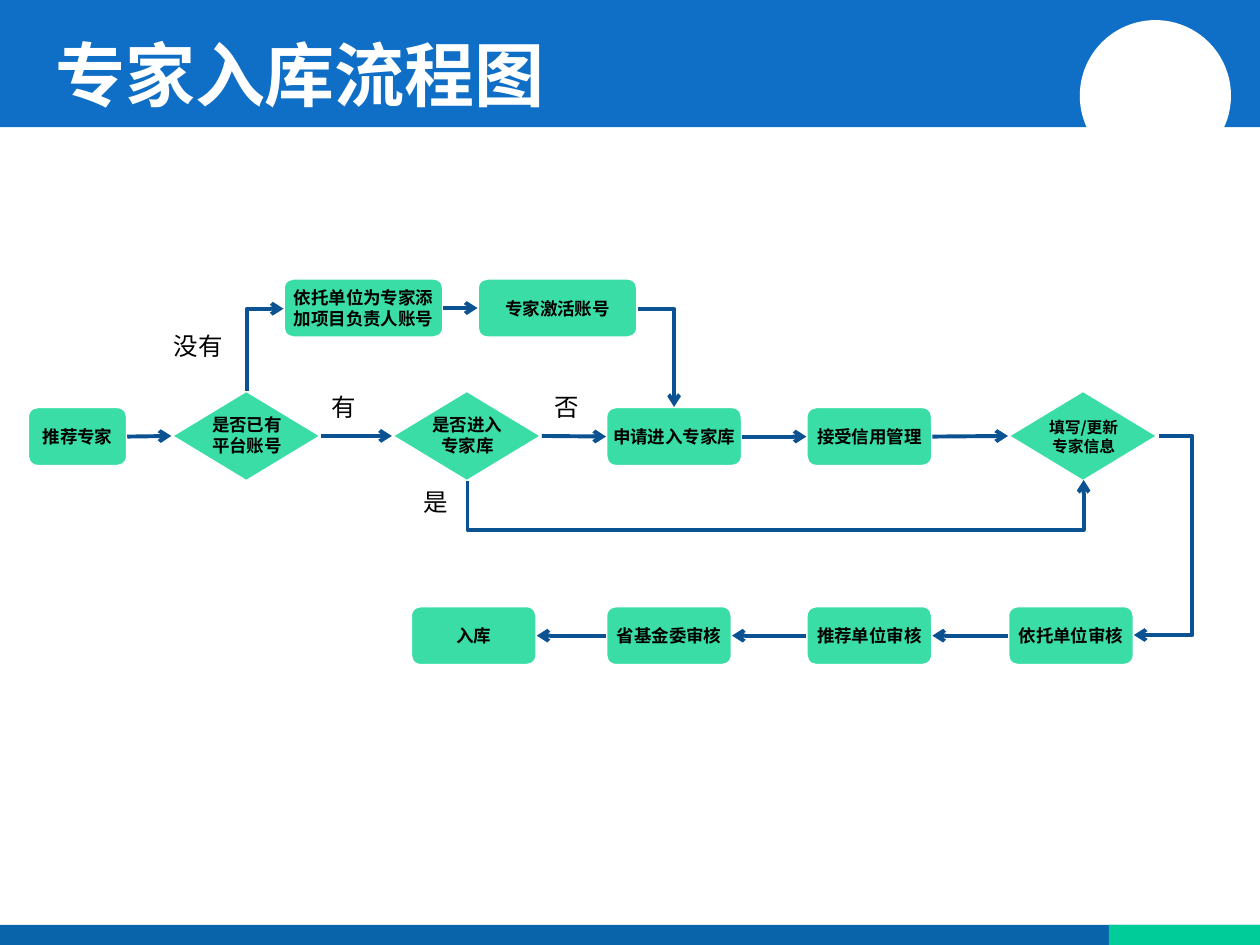
from lxml import etree
from pptx import Presentation
from pptx.dml.color import RGBColor
from pptx.enum.shapes import MSO_CONNECTOR, MSO_SHAPE
from pptx.enum.text import MSO_ANCHOR, PP_ALIGN
from pptx.oxml.ns import qn
from pptx.util import Inches, Pt

RECT, OVAL = MSO_SHAPE.RECTANGLE, MSO_SHAPE.OVAL
ROUNDED, DECISION = MSO_SHAPE.ROUNDED_RECTANGLE, MSO_SHAPE.FLOWCHART_DECISION
STRAIGHT, ELBOW = MSO_CONNECTOR.STRAIGHT, MSO_CONNECTOR.ELBOW
MIDDLE, CENTER, LEFT = MSO_ANCHOR.MIDDLE, PP_ALIGN.CENTER, PP_ALIGN.LEFT
LEFT_SIDE, RIGHT_SIDE = 1, 3

BLUE = RGBColor(0x0F, 0x6F, 0xC6)
FOOTER_BLUE = RGBColor(0x0A, 0x64, 0xAA)
FOOTER_GREEN = RGBColor(0x00, 0xCC, 0x99)
NODE_GREEN = RGBColor(0x3A, 0xDD, 0xA6)
ARROW_BLUE = RGBColor(0x0B, 0x52, 0x92)
WHITE = RGBColor(0xFF, 0xFF, 0xFF)
BLACK = RGBColor(0, 0, 0)
HEAD_FONT, LABEL_FONT = "Noto Sans CJK SC", "Arial"


class FlowSlide:
    def __init__(self, slide):
        self.shapes = slide.shapes

    def set_text(self, frame, text, size, font=HEAD_FONT, color=BLACK, bold=True, align=CENTER):
        frame.word_wrap = True
        frame.text = text
        for paragraph in frame.paragraphs:
            paragraph.alignment = align
            for run in paragraph.runs:
                run.font.size, run.font.bold, run.font.name = Pt(size), bold, font
                run.font.color.rgb = color
                ea = etree.SubElement(run.font._element, qn("a:ea"))
                ea.set("typeface", font)

    def block(self, kind, x, y, w, h, fill, outline=None, parent=None):
        shape = (parent or self.shapes).add_shape(kind, Inches(x), Inches(y), Inches(w), Inches(h))
        shape.shadow.inherit = False
        shape.fill.solid()
        shape.fill.fore_color.rgb = fill
        if outline is None:
            shape.line.fill.background()
        else:
            shape.line.color.rgb = outline
            shape.line.width = Pt(1.5)
        return shape

    def text(self, x, y, w, h, text, size, parent=None, **style):
        box = (parent or self.shapes).add_textbox(Inches(x), Inches(y), Inches(w), Inches(h))
        self.set_text(box.text_frame, text, size, **style)
        return box

    def step(self, x, y, w, text):
        shape = self.block(ROUNDED, x, y, w, 0.47, NODE_GREEN, WHITE)
        frame = shape.text_frame
        frame.margin_left = frame.margin_right = frame.margin_top = frame.margin_bottom = 0
        frame.vertical_anchor = MIDDLE
        self.set_text(frame, text, 10)
        return shape

    def decision(self, x, text, size=10, text_top=3.24):
        group = self.shapes.add_group_shape().shapes
        diamond = self.block(DECISION, x, 3.1, 1.19, 0.72, NODE_GREEN, WHITE, group)
        self.text(x + 0.05, text_top, 1.1, 0.44, text, size, group)
        return diamond

    def label(self, x, y, w, text):
        self.text(x, y, w, 0.34, text, 14, font=LABEL_FONT, bold=False, align=LEFT)

    def connector(self, kind, start, end):
        line = self.shapes.add_connector(kind, *(Inches(v) for v in (*start, *end)))
        line.line.color.rgb = ARROW_BLUE
        line.line.width = Pt(2.25)
        etree.SubElement(line.line._get_or_add_ln(), qn("a:tailEnd")).set("type", "arrow")
        etree.SubElement(line._element.spPr, qn("a:effectLst"))
        return line

    def arrow(self, source, target, out_side=RIGHT_SIDE, in_side=LEFT_SIDE):
        line = self.connector(STRAIGHT, (0, 0), (1, 1))
        line.begin_connect(source, out_side)
        line.end_connect(target, in_side)

    def elbow(self, start, end, preset, turn=0, bend=None):
        """Bent arrow; turn is its rotation in degrees, bend the middle leg as a share of width."""
        cx, cy = (start[0] + end[0]) / 2, (start[1] + end[1]) / 2
        dx, dy = start[0] - cx, start[1] - cy
        dx, dy = {0: (dx, dy), 90: (dy, -dx), 270: (-dy, dx)}[turn]
        line = self.connector(ELBOW, (cx + dx, cy + dy), (cx - dx, cy - dy))
        properties = line._element.spPr
        if turn:
            properties.find(qn("a:xfrm")).set("rot", str(turn * 60000))
        geometry = properties.find(qn("a:prstGeom"))
        geometry.set("prst", preset)
        if bend is not None:
            guides = geometry.find(qn("a:avLst"))
            if guides is None:
                guides = etree.SubElement(geometry, qn("a:avLst"))
            guide = etree.SubElement(guides, qn("a:gd"))
            guide.set("name", "adj1")
            guide.set("fmla", f"val {round(bend * 100000)}")


def main():
    prs = Presentation()
    prs.slide_width, prs.slide_height = Inches(10), Inches(7.5)
    flow = FlowSlide(prs.slides.add_slide(prs.slide_layouts[6]))

    # Header and footer
    flow.block(RECT, 0, 0, 10, 1.01, BLUE)
    flow.block(RECT, 0, 7.34, 10, 0.16, FOOTER_BLUE)
    flow.block(RECT, 8.8, 7.34, 1.2, 0.16, FOOTER_GREEN)
    flow.block(OVAL, 8.57, 0.16, 1.2, 1.2, WHITE)
    title = flow.text(0.34, 0.04, 9, 1.08, "专家入库流程图", 40, color=WHITE, align=LEFT)
    title.text_frame.vertical_anchor = MIDDLE

    # Upper row: opening an account
    add_account = flow.step(2.25, 2.21, 1.27, "依托单位为专家添加项目负责人账号")
    activate = flow.step(3.79, 2.21, 1.27, "专家激活账号")

    # Middle row: joining the expert pool
    recommend = flow.step(0.22, 3.23, 0.79, "推荐专家")
    has_account = flow.decision(1.36, "是否已有\n平台账号")
    in_pool = flow.decision(3.11, "是否进入\n专家库")
    apply = flow.step(4.81, 3.23, 1.08, "申请进入专家库")
    accept = flow.step(6.4, 3.23, 1, "接受信用管理")
    update = flow.decision(8, "填写/更新\n专家信息", 9, 3.27)

    # Lower row: reviews, from right to left
    reviews = [flow.step(x, 4.81, 1, text) for x, text in (
        (8, "依托单位审核"), (6.4, "推荐单位审核"), (4.81, "省基金委审核"), (3.26, "入库"))]

    # Straight arrows
    flow.arrow(add_account, activate)
    middle_row = [recommend, has_account, in_pool, apply, accept, update]
    for source, target in zip(middle_row, middle_row[1:]):
        flow.arrow(source, target)
    for source, target in zip(reviews, reviews[1:]):
        flow.arrow(source, target, LEFT_SIDE, RIGHT_SIDE)

    # Bent arrows
    flow.elbow((1.96, 3.1), (2.25, 2.45), "bentConnector2", turn=270)
    flow.elbow((5.06, 2.45), (5.35, 3.23), "bentConnector2")
    flow.elbow((3.71, 3.82), (8.6, 3.81), "bentConnector3", turn=90, bend=-39)
    flow.elbow((9.2, 3.46), (9, 5.04), "bentConnector3", bend=-1.32)

    # Branch labels
    flow.label(1.28, 2.58, 0.77, "没有")
    flow.label(2.53, 3.06, 0.77, "有")
    flow.label(4.3, 3.06, 0.39, "否")
    flow.label(3.26, 3.82, 0.39, "是")

    prs.save("out.pptx")


if __name__ == "__main__":
    main()
